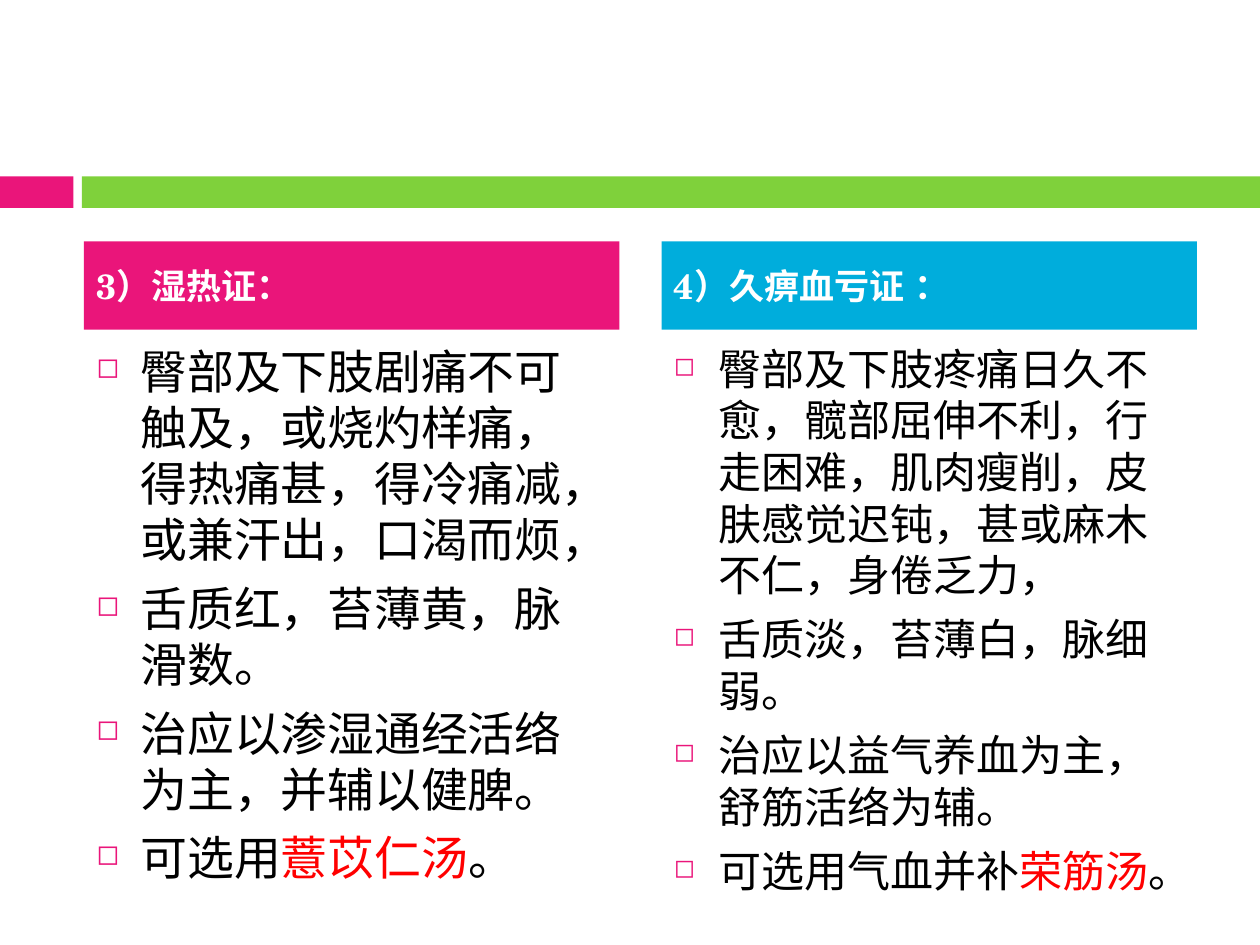
import pptx
import pptx.util
import pptx.dml.color
import pptx.enum.shapes
import pptx.enum.text
import pptx.oxml.ns
from lxml import etree

Pt = pptx.util.Pt
RGB = pptx.dml.color.RGBColor

PINK = RGB(0xEA, 0x15, 0x7A)
GREEN = RGB(0x7F, 0xD1, 0x3B)
BLUE = RGB(0x00, 0xAD, 0xDC)
RED = RGB(0xFF, 0x00, 0x00)
BLACK = RGB(0x00, 0x00, 0x00)
WHITE = RGB(0xFF, 0xFF, 0xFF)
FONT = "TeX Gyre Schola"

COLUMNS = [
    ("3）湿热证：", PINK, 26.8, [
        [("臀部及下肢剧痛不可触及，或烧灼样痛，得热痛甚，得冷痛减，或兼汗出，口渴而烦，", BLACK)],
        [("舌质红，苔薄黄，脉滑数。", BLACK)],
        [("治应以渗湿通经活络为主，并辅以健脾。", BLACK)],
        [("可选用", BLACK), ("薏苡仁汤", RED), ("。", BLACK)],
    ]),
    ("4）久痹血亏证 ：", BLUE, 24.6, [
        [("臀部及下肢疼痛日久不愈，髋部屈伸不利，行走困难，肌肉瘦削，皮肤感觉迟钝，甚或麻木不仁，身倦乏力，", BLACK)],
        [("舌质淡，苔薄白，脉细弱。", BLACK)],
        [("治应以益气养血为主，舒筋活络为辅。", BLACK)],
        [("可选用气血并补", BLACK), ("荣筋汤", RED), ("。", BLACK)],
    ]),
]
BARS = [(0, 42, PINK), (46.8, 673.2, GREEN)]
BAR_TOP, BAR_H = 100.8, 18
LEFT, COL_W, COL_GAP = 48, 306, 24
HEAD_TOP, HEAD_H = 138, 50.4
BODY_TOP, BODY_H = 192, 282
INDENT = 25.2


def add_rect(s, x, y, w, h, color):
    sp = s.shapes.add_shape(pptx.enum.shapes.MSO_SHAPE.RECTANGLE,
                            Pt(x), Pt(y), Pt(w), Pt(h))
    sp.shadow.inherit = False
    sp.fill.solid()
    sp.fill.fore_color.rgb = color
    sp.line.fill.background()
    return sp


def add_run(p, text, size, color, bold=False):
    r = p.add_run()
    r.text = text
    r.font.size = Pt(size)
    r.font.bold = bold
    r.font.color.rgb = color
    r.font.name = FONT
    ea = etree.SubElement(r.font._element, pptx.oxml.ns.qn("a:ea"))
    ea.set("typeface", FONT)


def add_bullet(p):
    pPr = p._p.get_or_add_pPr()
    pPr.set("marL", str(Pt(INDENT)))
    pPr.set("indent", str(-Pt(INDENT)))
    qn = pptx.oxml.ns.qn
    color = etree.SubElement(pPr, qn("a:buClr"))
    etree.SubElement(color, qn("a:srgbClr")).set("val", str(PINK))
    etree.SubElement(pPr, qn("a:buSzPct")).set("val", "60000")
    etree.SubElement(pPr, qn("a:buChar")).set("char", "◻")


def add_heading(s, x, text, color):
    sp = add_rect(s, x, HEAD_TOP, COL_W, HEAD_H, color)
    tf = sp.text_frame
    tf.word_wrap = True
    tf.vertical_anchor = pptx.enum.text.MSO_ANCHOR.MIDDLE
    p = tf.paragraphs[0]
    p.alignment = pptx.enum.text.PP_ALIGN.LEFT
    p.space_before = Pt(7)
    add_run(p, text, 20, WHITE, True)


def add_body(s, x, size, items):
    tf = s.shapes.add_textbox(Pt(x), Pt(BODY_TOP), Pt(COL_W), Pt(BODY_H)).text_frame
    tf.word_wrap = True
    for i, runs in enumerate(items):
        p = tf.add_paragraph() if i else tf.paragraphs[0]
        p.space_before = Pt(7)
        add_bullet(p)
        for text, color in runs:
            add_run(p, text, size, color)


def main():
    prs = pptx.Presentation()
    prs.slide_width, prs.slide_height = Pt(720), Pt(540)
    s = prs.slides.add_slide(prs.slide_layouts[6])
    for x, w, color in BARS:
        add_rect(s, x, BAR_TOP, w, BAR_H, color)
    for i, (heading, color, size, items) in enumerate(COLUMNS):
        x = LEFT + i * (COL_W + COL_GAP)
        add_body(s, x, size, items)
        add_heading(s, x, heading, color)
    prs.save("out.pptx")


if __name__ == "__main__":
    main()
